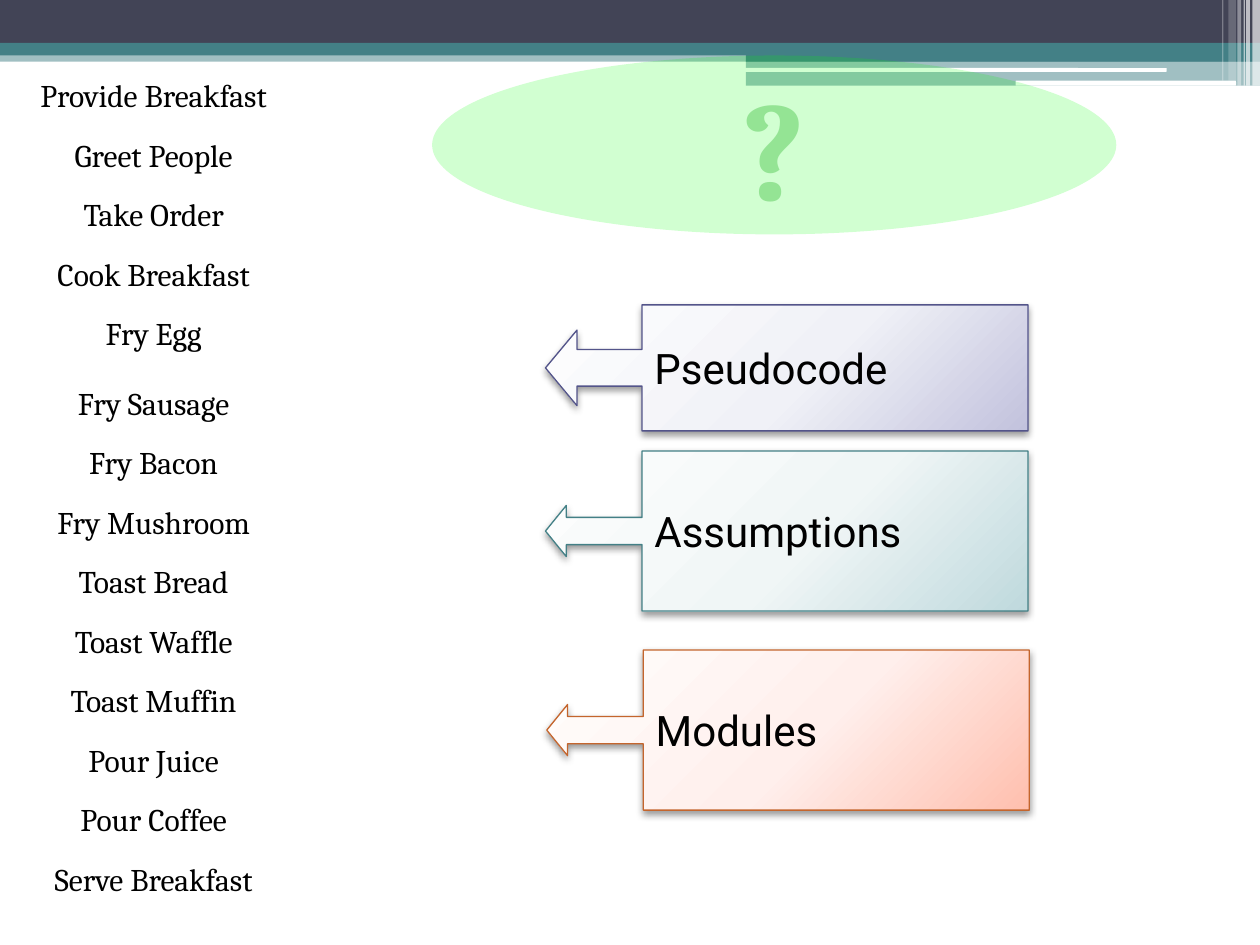
from lxml.etree import SubElement
from pptx import Presentation
from pptx.dml.color import RGBColor
from pptx.enum.shapes import MSO_SHAPE
from pptx.enum.text import MSO_ANCHOR, PP_ALIGN
from pptx.oxml import parse_xml
from pptx.oxml.ns import nsdecls, qn
from pptx.util import Inches, Pt

# Content: step groups with the top of their first label
STEP_GROUPS = [
    (0.52, ["Provide Breakfast", "Greet People", "Take Order",
            "Cook Breakfast", "Fry Egg"]),
    (2.96, ["Fry Sausage", "Fry Bacon", "Fry Mushroom", "Toast Bread",
            "Toast Waffle", "Toast Muffin", "Pour Juice", "Pour Coffee",
            "Serve Breakfast"]),
]
STEP_LEFT, STEP_WIDTH, STEP_HEIGHT = 0.12, 2.2, 0.47
LAST_STEP_TOP = 6.74

LARGE_ARROW = (0.29, 0.3, 0.25, 0.8)
SMALL_ARROW = (0.17, 0.16, 0.13, 0.8)
# Text, left, top, height, arrow proportions, line colour, gradient colours
CALLOUTS = [
    ("Pseudocode", 4.33, 2.42, 1, LARGE_ARROW, "53548A",
     ("FEFEFE", "F0F1F7", "C2C2DD")),
    ("Assumptions", 4.33, 3.58, 1.27, SMALL_ARROW, "438086",
     ("FEFEFE", "F0F6F6", "BFD9DD")),
    ("Modules", 4.34, 5.16, 1.27, SMALL_ARROW, "C4652D",
     ("FFFEFD", "FFEFEC", "FFBFAE")),
]
CALLOUT_WIDTH = 3.83
GRADIENT_POSITIONS = (0, 55, 100)

# Header decoration: left, top, width, height, colour, opacity in percent
HEADER_BANDS = [
    (0, 0.4, 10, 0.09, "438086", 50),
    (0, 0, 10, 0.34, "424456", 100),
    (0, 0.34, 10, 0.1, "438086", 100),
    (5.92, 0.39, 4.08, 0.1, "438086", 100),
    (5.92, 0.48, 4.08, 0.2, "438086", 50),
]
HEADER_LINES = [
    (5.91, 0.54, 3.35, 0.03, "FFFFFF", 100),
    (8.06, 0.64, 1.75, 0.04, "FFFFFF", 100),
]
# Left, width, height, opacity in percent
HEADER_STRIPES = [
    (9.94, 0.06, 0.68, 65), (9.89, 0.03, 0.68, 65), (9.87, 0.01, 0.68, 60),
    (9.82, 0.03, 0.68, 40), (9.75, 0.06, 0.64, 20), (9.7, 0.01, 0.64, 30),
]


def color(hex_value):
    return RGBColor.from_string(hex_value)


def add_filled(slide, kind, left, top, width, height, fill, opacity=100):
    shape = slide.shapes.add_shape(
        kind, Inches(left), Inches(top), Inches(width), Inches(height))
    shape.shadow.inherit = False
    shape.line.fill.background()
    shape.fill.solid()
    shape.fill.fore_color.rgb = color(fill)
    if opacity < 100:
        fill_color = shape.fill._xPr.find(qn("a:solidFill"))[0]
        SubElement(fill_color, qn("a:alpha"), val=str(opacity * 1000))
    return shape


def write_text(shape, text, size, font, hex_value, align, wrap=False, bold=False):
    frame = shape.text_frame
    frame.word_wrap = wrap
    frame.vertical_anchor = MSO_ANCHOR.MIDDLE
    paragraph = frame.paragraphs[0]
    paragraph.alignment = align
    run = paragraph.add_run()
    run.text = text
    run.font.size = Pt(size)
    run.font.name = font
    run.font.bold = bold
    run.font.color.rgb = color(hex_value)


def add_gradient_and_shadow(shape, colors):
    stops = "".join(
        f'<a:gs pos="{position * 1000}"><a:srgbClr val="{value}"/></a:gs>'
        for position, value in zip(GRADIENT_POSITIONS, colors))
    gradient = parse_xml(
        f'<a:gradFill {nsdecls("a")} rotWithShape="1"><a:gsLst>{stops}</a:gsLst>'
        '<a:path path="circle"><a:fillToRect l="-40000" t="-90000" '
        'r="140000" b="190000"/></a:path></a:gradFill>')
    properties = shape._element.spPr
    properties.replace(properties.find(qn("a:solidFill")), gradient)
    shadow = parse_xml(
        f'<a:outerShdw {nsdecls("a")} blurRad="{Pt(4.1)}" dist="{Pt(2)}" '
        'dir="5400000" rotWithShape="0"><a:srgbClr val="000000">'
        '<a:alpha val="40000"/></a:srgbClr></a:outerShdw>')
    properties.find(qn("a:effectLst")).append(shadow)


def add_callout(slide, text, left, top, height, proportions, line, colors):
    shape = add_filled(slide, MSO_SHAPE.RIGHT_ARROW_CALLOUT,
                       left, top, CALLOUT_WIDTH, height, colors[0])
    shape._element.spPr.find(qn("a:xfrm")).set("flipH", "1")
    for index, proportion in enumerate(proportions):
        shape.adjustments[index] = proportion
    shape.line.color.rgb = color(line)
    shape.line.width = Pt(0.75)
    add_gradient_and_shadow(shape, colors)
    write_text(shape, text, 24, "Roboto", "000000", PP_ALIGN.LEFT, wrap=True)


def main():
    presentation = Presentation()
    presentation.slide_width = Inches(10)
    presentation.slide_height = Inches(7.5)
    slide = presentation.slides.add_slide(presentation.slide_layouts[6])

    # Header
    for band in HEADER_BANDS:
        add_filled(slide, MSO_SHAPE.RECTANGLE, *band)
    for line in HEADER_LINES:
        add_filled(slide, MSO_SHAPE.ROUNDED_RECTANGLE, *line)
    for left, width, height, opacity in HEADER_STRIPES:
        add_filled(slide, MSO_SHAPE.RECTANGLE, left, 0, width, height,
                   "FFFFFF", opacity)

    # Breakfast steps, evenly spaced down to the last one
    first_top, last_steps = STEP_GROUPS[-1]
    pitch = (LAST_STEP_TOP - first_top) / (len(last_steps) - 1)
    for group_top, steps in STEP_GROUPS:
        for index, step in enumerate(steps):
            label = slide.shapes.add_textbox(
                Inches(STEP_LEFT), Inches(group_top + index * pitch),
                Inches(STEP_WIDTH), Inches(STEP_HEIGHT))
            write_text(label, step, 18, "Cambria", "000000", PP_ALIGN.CENTER)

    # Question ellipse
    ellipse = add_filled(slide, MSO_SHAPE.OVAL, 3.43, 0.44, 5.43, 1.42,
                         "00FF00", 18)
    write_text(ellipse, "?", 80, "Cambria", "94E494", PP_ALIGN.CENTER, bold=True)

    # Callouts
    for callout in CALLOUTS:
        add_callout(slide, *callout)

    presentation.save("out.pptx")


if __name__ == "__main__":
    main()
